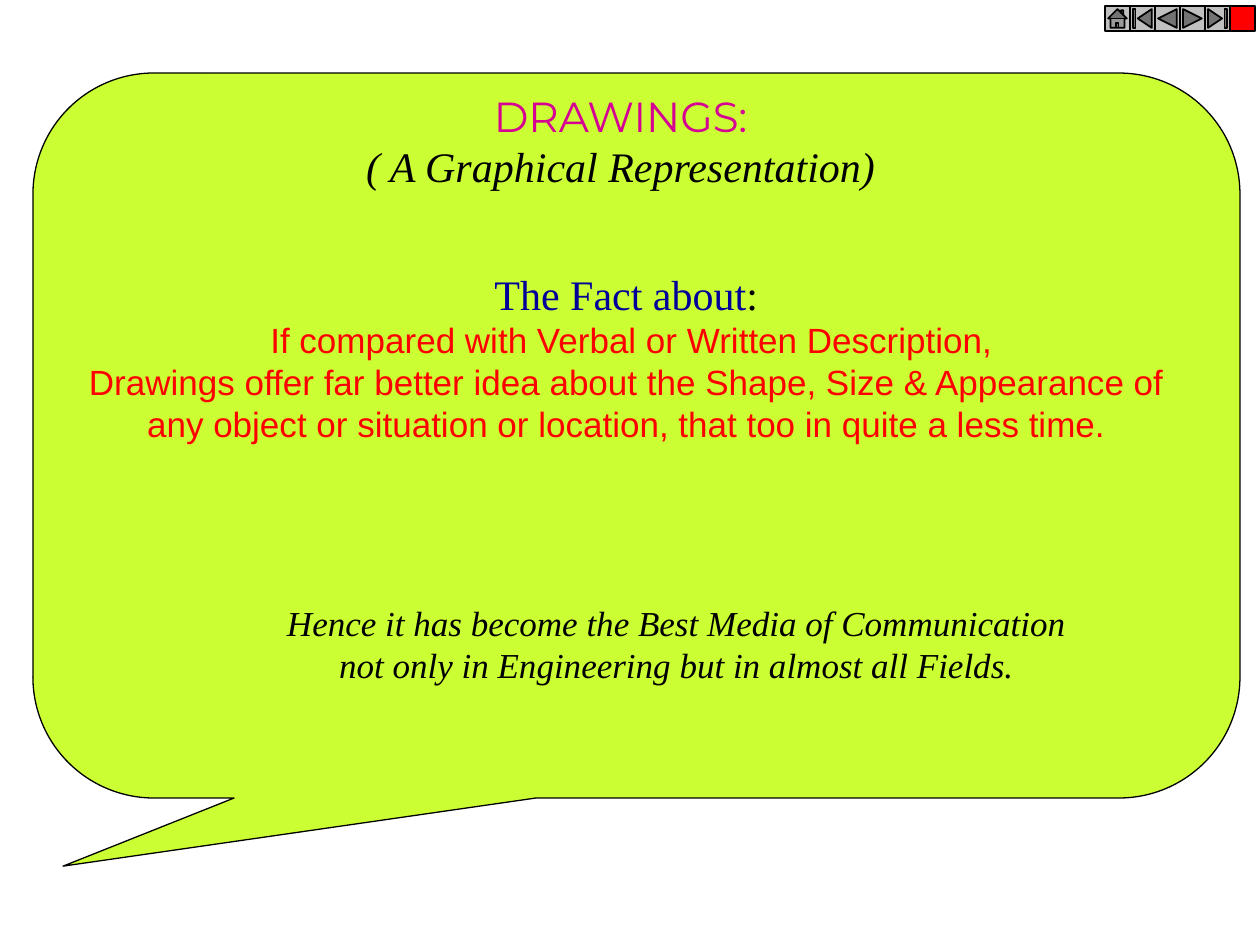
from dataclasses import dataclass

import pptx
import pptx.dml.color
import pptx.enum.shapes
import pptx.enum.text
import pptx.util

RGBColor = pptx.dml.color.RGBColor
Shapes = pptx.enum.shapes.MSO_SHAPE

PIXEL = 914400 / 126

LIME = RGBColor(0xCC, 0xFF, 0x33)
MAGENTA = RGBColor(0xD6, 0x00, 0x93)
NAVY = RGBColor(0x00, 0x00, 0x99)
RED = RGBColor(0xFF, 0x00, 0x00)
SILVER = RGBColor(0xC0, 0xC0, 0xC0)
BLACK = RGBColor(0x00, 0x00, 0x00)

SERIF = "Times New Roman"


@dataclass(frozen=True)
class Box:
    left: int
    top: int
    width: int
    height: int

    def emu(self) -> list[int]:
        return [px(value) for value in (self.left, self.top, self.width, self.height)]


@dataclass(frozen=True)
class Style:
    font: str
    size: int
    color: RGBColor
    italic: bool = False


@dataclass(frozen=True)
class Piece:
    text: str
    style: Style


@dataclass(frozen=True)
class TextBlock:
    box: Box
    lines: list[list[Piece]]


TITLE = Style("Montserrat", 24, MAGENTA)
SUBTITLE = Style(SERIF, 24, BLACK, italic=True)
HEADING = Style(SERIF, 24, NAVY)
COLON = Style(SERIF, 24, BLACK)
FACT = Style("Arial", 20, RED)
CONCLUSION = Style(SERIF, 20, BLACK, italic=True)

TEXT_BLOCKS = [
    TextBlock(Box(346, 84, 549, 113), [
        [Piece("DRAWINGS:", TITLE)],
        [Piece("( A Graphical Representation)", SUBTITLE)],
    ]),
    TextBlock(Box(42, 262, 1179, 189), [
        [Piece("The Fact about", HEADING), Piece(": ", COLON)],
        [Piece("If compared with Verbal or Written Description,", FACT)],
        [Piece("Drawings offer far better idea about the Shape, Size & Appearance of ", FACT)],
        [Piece("any object or situation or location, that too in quite a less time. ", FACT)],
    ]),
    TextBlock(Box(271, 595, 811, 97), [
        [Piece("Hence it has become the Best Media of Communication ", CONCLUSION)],
        [Piece("not only in Engineering but in almost all Fields.", CONCLUSION)],
    ]),
]

CALLOUT = Box(33, 73, 1207, 725)
CALLOUT_ADJUSTMENTS = (-0.475, 0.594, 0.167)

BUTTON_LEFT, BUTTON_TOP, BUTTON_SIZE = 1105, 6, 25
BUTTONS = [
    (Shapes.ACTION_BUTTON_HOME, SILVER),
    (Shapes.ACTION_BUTTON_BEGINNING, SILVER),
    (Shapes.ACTION_BUTTON_BACK_OR_PREVIOUS, SILVER),
    (Shapes.ACTION_BUTTON_FORWARD_OR_NEXT, SILVER),
    (Shapes.ACTION_BUTTON_END, SILVER),
    (Shapes.ACTION_BUTTON_CUSTOM, RED),
]


def px(value: int) -> int:
    return round(value * PIXEL)


def draw_shape(shapes, kind: Shapes, box: Box, fill: RGBColor, line_width: float):
    shape = shapes.add_shape(kind, *box.emu())
    shape.shadow.inherit = False
    shape.fill.solid()
    shape.fill.fore_color.rgb = fill
    shape.line.color.rgb = BLACK
    shape.line.width = pptx.util.Pt(line_width)
    return shape


def draw_callout(slide) -> None:
    callout = draw_shape(slide.shapes, Shapes.ROUNDED_RECTANGULAR_CALLOUT, CALLOUT, LIME, 0.75)
    for index, value in enumerate(CALLOUT_ADJUSTMENTS):
        callout.adjustments[index] = value


def draw_text(slide, block: TextBlock) -> None:
    text_frame = slide.shapes.add_textbox(*block.box.emu()).text_frame
    text_frame.word_wrap = False
    text_frame.auto_size = pptx.enum.text.MSO_AUTO_SIZE.SHAPE_TO_FIT_TEXT
    for index, line in enumerate(block.lines):
        paragraph = text_frame.add_paragraph() if index else text_frame.paragraphs[0]
        paragraph.alignment = pptx.enum.text.PP_ALIGN.CENTER
        for piece in line:
            run = paragraph.add_run()
            run.text = piece.text
            run.font.name = piece.style.font
            run.font.size = pptx.util.Pt(piece.style.size)
            run.font.color.rgb = piece.style.color
            run.font.italic = piece.style.italic


def draw_navigation(slide) -> None:
    group = slide.shapes.add_group_shape()
    for index, (kind, fill) in enumerate(BUTTONS):
        left = BUTTON_LEFT + index * BUTTON_SIZE
        draw_shape(group.shapes, kind, Box(left, BUTTON_TOP, BUTTON_SIZE, BUTTON_SIZE), fill, 1)


def main() -> None:
    presentation = pptx.Presentation()
    presentation.slide_width = px(1260)
    presentation.slide_height = px(945)
    slide = presentation.slides.add_slide(presentation.slide_layouts[6])
    draw_callout(slide)
    for block in TEXT_BLOCKS:
        draw_text(slide, block)
    draw_navigation(slide)
    presentation.save("out.pptx")


if __name__ == "__main__":
    main()
